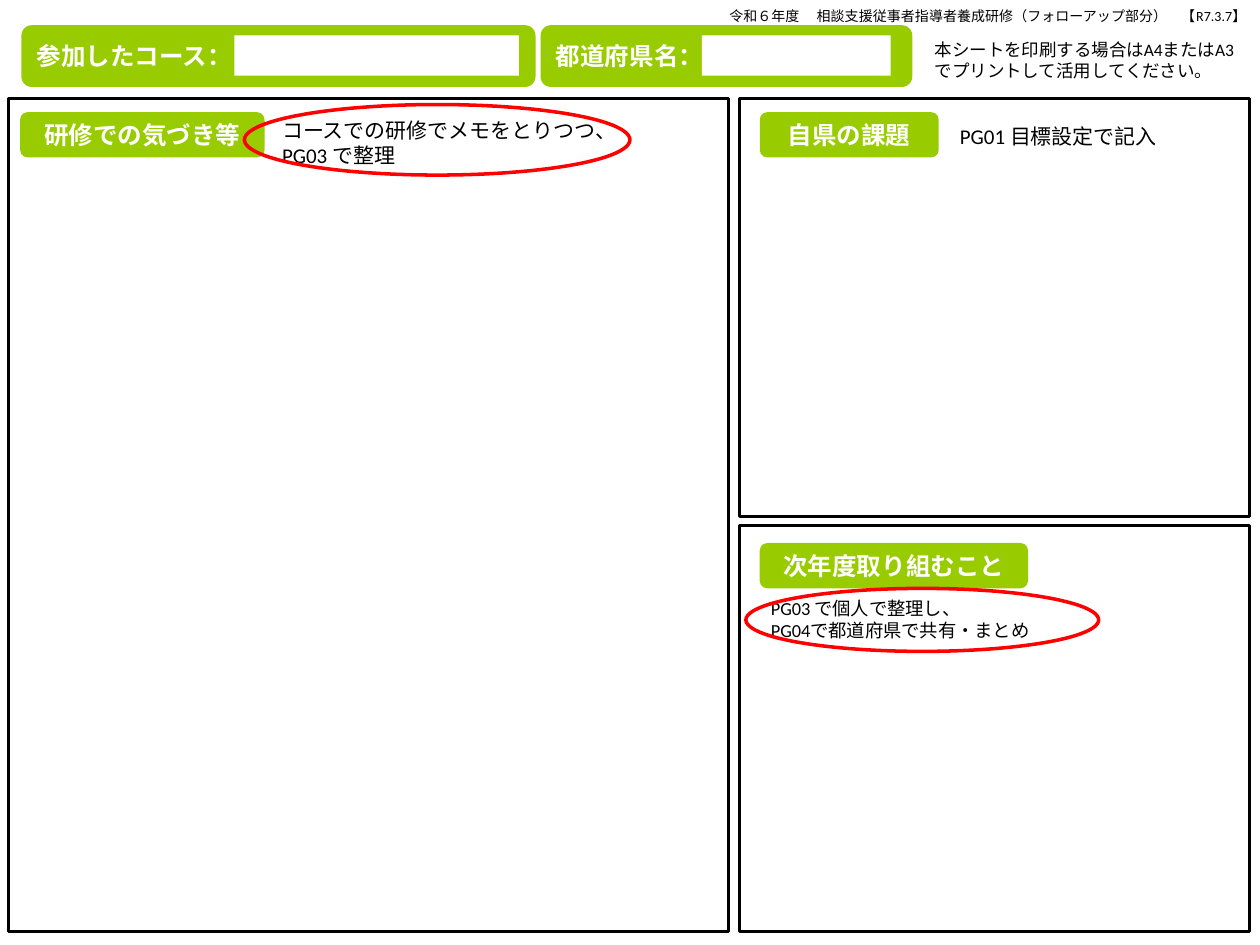
from dataclasses import dataclass

from pptx import Presentation
from pptx import util as u
from pptx.dml.color import RGBColor
from pptx.enum import shapes, text

SLIDE_WIDTH, SLIDE_HEIGHT = u.Inches(10), u.Inches(7.5)
COLUMNS, ROWS = 100, 75  # square grid cells
KINDS = shapes.MSO_SHAPE


@dataclass(frozen=True)
class Theme:
    font: str = "Calibri"
    label_fill: str = "99CC00"
    paper: str = "FFFFFF"
    ink: str = "000000"
    accent: str = "FF0000"
    label_size: float = 14
    note_size: float = 12
    small_note_size: float = 10.5
    print_size: float = 10
    header_size: float = 8
    frame_width: float = 1.75
    ring_width: float = 2


THEME = Theme()


def place(column, row, columns, rows):
    """Turn grid columns and rows into slide lengths."""
    return (round(SLIDE_WIDTH * column / COLUMNS), round(SLIDE_HEIGHT * row / ROWS),
            round(SLIDE_WIDTH * columns / COLUMNS), round(SLIDE_HEIGHT * rows / ROWS))


def write(frame, lines, size, color, bold=False, align=text.PP_ALIGN.LEFT):
    frame.word_wrap = True
    for index, line in enumerate(lines):
        paragraph = frame.paragraphs[0] if index == 0 else frame.add_paragraph()
        paragraph.alignment = align
        run = paragraph.add_run()
        run.text = line
        run.font.name = THEME.font
        run.font.size = u.Pt(size)
        run.font.bold = bold
        run.font.color.rgb = RGBColor.from_string(color)


def add_filled(slide, kind, area, color):
    block = slide.shapes.add_shape(kind, *place(*area))
    block.shadow.inherit = False
    block.fill.solid()
    block.fill.fore_color.rgb = RGBColor.from_string(color)
    block.line.fill.background()
    return block


def add_outline(slide, kind, area, color, width):
    outline = slide.shapes.add_shape(kind, *place(*area))
    outline.shadow.inherit = False
    outline.fill.background()
    outline.line.color.rgb = RGBColor.from_string(color)
    outline.line.width = u.Pt(width)


def add_label(slide, area, caption, align=text.PP_ALIGN.CENTER):
    label = add_filled(slide, KINDS.ROUNDED_RECTANGLE, area, THEME.label_fill)
    label.text_frame.vertical_anchor = text.MSO_ANCHOR.MIDDLE
    write(label.text_frame, [caption], THEME.label_size, THEME.paper, True, align)


def add_entry_field(slide, label_area, caption, blank_area):
    add_label(slide, label_area, caption, text.PP_ALIGN.LEFT)
    add_filled(slide, KINDS.RECTANGLE, blank_area, THEME.paper)


def add_note(slide, area, lines, size, align=text.PP_ALIGN.LEFT):
    note = slide.shapes.add_textbox(*place(*area))
    write(note.text_frame, lines, size, THEME.ink, align=align)


def main():
    deck = Presentation()
    deck.slide_width, deck.slide_height = SLIDE_WIDTH, SLIDE_HEIGHT
    slide = deck.slides.add_slide(deck.slide_layouts[6])

    # Worksheet sections: frame, then its label
    sections = [
        ((0.7, 7.8, 57.1, 66.1), (1.6, 8.9, 19.4, 3.6), "研修での気づき等"),
        ((58.7, 7.8, 40.5, 33.2), (60.3, 8.9, 14.2, 3.6), "自県の課題"),
        ((58.7, 41.7, 40.5, 32.2), (60.3, 43.1, 21.3, 3.6), "次年度取り組むこと"),
    ]
    for frame_area, label_area, caption in sections:
        add_outline(slide, KINDS.RECTANGLE, frame_area, THEME.ink, THEME.frame_width)
        add_label(slide, label_area, caption)

    # Participant fields
    add_entry_field(slide, (1.7, 2, 40.8, 4.9), "参加したコース：", (18.6, 2.8, 22.6, 3.2))
    add_entry_field(slide, (42.9, 2, 29.5, 4.9), "都道府県名：", (55.7, 2.8, 15, 3.2))

    # Header line and printing advice
    add_note(slide, (44.5, 0.1, 55.4, 3.7),
             ["令和６年度 　相談支援従事者指導者養成研修（フォローアップ部分）　【R7.3.7】"],
             THEME.header_size, text.PP_ALIGN.RIGHT)
    add_note(slide, (73.2, 2.6, 25.9, 4.4),
             ["本シートを印刷する場合はA4またはA3でプリントして活用してください。"],
             THEME.print_size)

    # Guidance for each section
    add_note(slide, (75.2, 9.3, 19.4, 3), ["PG01 目標設定で記入"], THEME.note_size)
    add_note(slide, (21.4, 8.8, 35.5, 5),
             ["コースでの研修でメモをとりつつ、", "PG03 で整理"], THEME.note_size)
    add_note(slide, (60.2, 46.9, 23.7, 4.5),
             ["PG03 で個人で整理し、", "PG04で都道府県で共有・まとめ"], THEME.small_note_size)

    # Rings around the guidance for PG03 and PG04
    for ring_area in [(19.4, 8.3, 30.6, 5.6), (59.2, 46.7, 28, 5)]:
        add_outline(slide, KINDS.OVAL, ring_area, THEME.accent, THEME.ring_width)

    deck.save("out.pptx")


if __name__ == "__main__":
    main()
